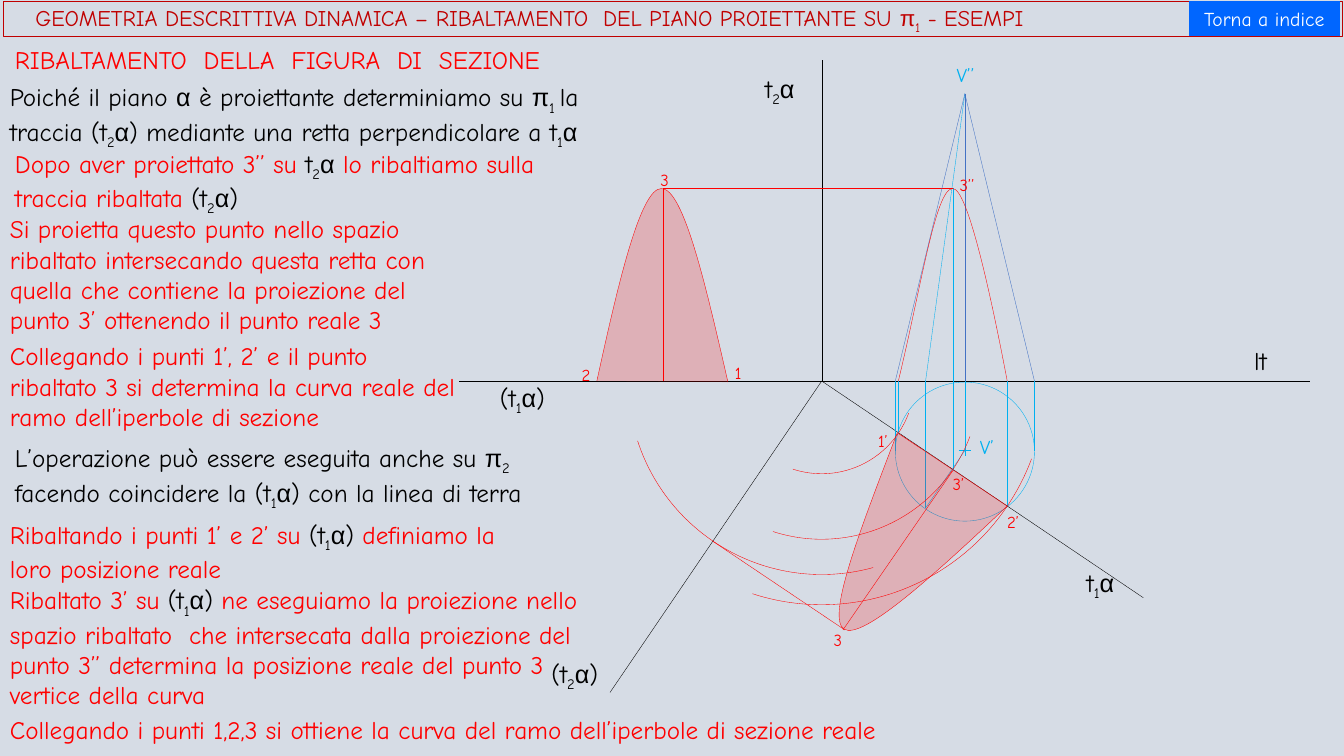
from itertools import groupby

from lxml.etree import SubElement
from pptx import Presentation
from pptx.dml.color import RGBColor
from pptx.enum.shapes import MSO_CONNECTOR, MSO_SHAPE
from pptx.enum.text import MSO_ANCHOR, MSO_AUTO_SIZE, PP_ALIGN
from pptx.oxml.ns import qn
from pptx.util import Inches, Pt

BLACK, RED, CYAN, BLUE = "000000", "FF0000", "00B0F0", "4472C4"
DARK, BUTTON, PAPER, WHITE = "C00000", "0066FF", "D6DCE5", "FFFFFF"
FONT, GREEK = "Comic Neue", "Arial"


def rgb(code):
    return RGBColor.from_string(code)


def split(text, color):
    """Yield (char, font, lowered, color): _ lowers one character, [ ] turn black."""
    low, ink = False, color
    for char in text:
        if char == "_":
            low = True
        elif char in "[]":
            ink = BLACK if char == "[" else color
        else:
            yield char, GREEK if char in "απ" else FONT, low, ink
            low = False


class Board:
    def __init__(self, slide):
        self.slide = slide
        self.shapes = slide.shapes
        self.width = Pt(0.25)
        slide.background.fill.solid()
        slide.background.fill.fore_color.rgb = rgb(PAPER)

    def paint(self, shape, fill=None, line=None, alpha=None):
        shape.shadow.inherit = False
        if fill:
            shape.fill.solid()
            shape.fill.fore_color.rgb = rgb(fill)
        else:
            shape.fill.background()
        if alpha:
            tone = shape._element.spPr.find(qn("a:solidFill"))[0]
            SubElement(tone, qn("a:alpha"), val=str(alpha * 1000))
        if line:
            shape.line.color.rgb = rgb(line)
            shape.line.width = self.width
        else:
            shape.line.fill.background()

    def line(self, color, start, end):
        spots = [Inches(v) for v in (*start, *end)]
        link = self.shapes.add_connector(MSO_CONNECTOR.STRAIGHT, *spots)
        link.line.color.rgb = rgb(color)
        link.line.width = self.width
        SubElement(link._element.spPr, qn("a:effectLst"))
        return link

    def shape(self, kind, box, fill=None, line=None):
        item = self.shapes.add_shape(kind, *[Inches(v) for v in box])
        self.paint(item, fill, line)
        return item

    def arc(self, center, radius, start, end):
        """Draw a red arc between two angles in degrees."""
        x, y = center
        box = (x - radius, y - radius, 2 * radius, 2 * radius)
        item = self.shape(MSO_SHAPE.ARC, box, line=RED)
        for i, angle in enumerate((start, end)):
            item.adjustments[i] = angle * 0.6  # 60000 units a degree, over 100000

    def curve(self, start, parts, alpha=None):
        """Draw cubic arcs; each part is two control points and an end."""
        knots = [[Inches(v) for v in part[2]] for part in parts]
        form = self.shapes.build_freeform(*[Inches(v) for v in start])
        form.add_line_segments(knots, close=False)
        item = form.convert_to_shape()
        steps = item._element.spPr.findall(".//" + qn("a:lnTo"))
        for step, part in zip(steps, parts):
            bend = step.makeelement(qn("a:cubicBezTo"))
            for x, y in part:
                SubElement(bend, qn("a:pt"), x=str(Inches(x) - item.left),
                           y=str(Inches(y) - item.top))
            step.getparent().replace(step, bend)
        self.paint(item, RED if alpha else None, RED, alpha)

    def runs(self, frame, text, size, color, align=PP_ALIGN.LEFT):
        """Add marked text to the frame and return its paragraph."""
        frame.word_wrap = True
        para = frame.paragraphs[0]
        para.alignment = align
        for style, chars in groupby(split(text, color), lambda mark: mark[1:]):
            face, low, ink = style
            run = para.add_run()
            run.text = "".join(mark[0] for mark in chars)
            run.font.size = Pt(size)
            run.font.name = face
            run.font.color.rgb = rgb(ink)
            if low:
                run.font._element.set("baseline", "-25000")
        return para

    def text(self, box, text, size=18, color=RED):
        frame = self.shapes.add_textbox(*[Inches(v) for v in box]).text_frame
        self.runs(frame, text, size, color)
        frame.auto_size = MSO_AUTO_SIZE.SHAPE_TO_FIT_TEXT


def draw(board):
    apex, foot, center = (9.57, 0.93), (9.57, 4.47), (8.15, 3.78)
    ground, top = 3.78, 1.87
    one, two, three = (8.91, 4.3), (9.99, 5.02), (9.45, 4.67)
    side, turned = (9.18, 5.04), (8.37, 6.24)

    board.shape(MSO_SHAPE.OVAL, (8.88, 3.79, 1.38, 1.38), line=CYAN)
    lines = [
        (BLACK, (7.1, ground), (12.99, ground)),
        (BLACK, center, (4.55, ground)),
        (BLACK, center, (11.34, 5.93)),
        (BLACK, center, (8.15, 0.6)),
        (BLACK, center, (6.05, 6.87)),
        (CYAN, (9.57, ground), foot),
        (BLUE, (9.57, ground), apex),
        (CYAN, foot, side),
        (CYAN, (side[0], ground), side),
        (CYAN, (side[0], ground), apex),
        (CYAN, (three[0], top), three),
        (CYAN, one, (one[0], ground)),
        (CYAN, two, (two[0], ground)),
        (RED, one, two),
        (RED, (three[0], top), (8.15, top)),
        (RED, (8.15, top), (6.58, top)),
        (RED, (6.58, ground), (6.58, top)),
        (RED, (7.07, 5.37), (8.38, 6.25)),
        (RED, three, (8.36, 6.25)),
    ]
    for x in (8.88, 10.26):
        lines += [(CYAN, (x, 4.47), (x, ground)), (BLUE, (x, ground), apex)]
    for color, start, end in lines:
        board.line(color, start, end)
    cross = [board.line(CYAN, (9.51, 4.47), (9.63, 4.47)),
             board.line(CYAN, (9.57, 4.41), (9.57, 4.52))]
    board.shapes.add_group_shape(cross)

    for radius, start, end in [(1.92, 74.61, 161.99), (2.22, 20.35, 108.02),
                               (0.92, 20.26, 108.03), (1.57, 20.48, 107.91)]:
        board.arc(center, radius, start, end)

    board.curve((8.91, ground), [
        ((9.14, 2.83), (9.28, top), (9.45, top)),
        ((9.59, top), (9.81, 2.83), (9.99, ground))])
    board.curve((8.9, 4.29), [
        ((8.55, 5.21), (8.19, 6.12), turned),
        ((8.55, 6.36), (9.28, 5.69), two)], alpha=20)
    board.curve((5.92, ground), [
        ((6.13, 2.82), (6.35, top), (6.56, top)),
        ((6.78, top), (7, 2.83), (7.22, 3.79))], alpha=20)


def label(board):
    for x, y, wide, text in [
            (12.34, 3.38, 0.56, "lt"), (10.68, 5.58, 0.56, "t_1α"),
            (7.49, 0.68, 0.86, "t_2α"), (5.37, 6.48, 0.86, "(t_2α)"),
            (4.86, 3.74, 0.75, "(t_1α)")]:
        board.text((x, y, wide, 0.4), text, color=BLACK)
    for x, y, wide, text in [(9.62, 4.27, 0.45, "V’"), (9.39, 0.58, 0.47, "V’’")]:
        board.text((x, y, wide, 0.34), text, 14, CYAN)
    for x, y, text in [
            (9.42, 1.68, "3’’"), (9.35, 4.65, "3’"), (8.17, 6.2, "3"),
            (8.61, 4.22, "1’"), (9.89, 5.03, "2’"), (7.19, 3.55, "1"),
            (5.67, 3.57, "2"), (6.45, 1.63, "3")]:
        board.text((x, y, 0.39, 0.3), text, 12)


def explain(board):
    for box, text in [
            ((0.05, 0.39, 6.62, 0.4), "RIBALTAMENTO  DELLA  FIGURA  DI  SEZIONE"),
            ((0, 0.76, 6.46, 0.71),
             "[Poiché il piano α è proiettante determiniamo su π_1_ la traccia (t_2α) "
             "mediante una retta perpendicolare a t_1α]"),
            ((0.05, 1.42, 5.63, 0.71),
             "Dopo aver proiettato 3’’ su [t_2α] lo ribaltiamo sulla traccia "
             "ribaltata [(t_2α)]"),
            ((0, 2.07, 4.69, 1.31),
             "Si proietta questo punto nello spazio ribaltato intersecando questa "
             "retta con quella che contiene la proiezione del punto 3’ ottenendo "
             "il punto reale 3"),
            ((0, 3.33, 4.67, 1.01),
             "Collegando i punti 1’, 2’ e il punto ribaltato 3 si determina la "
             "curva reale del ramo dell’iperbole di sezione"),
            ((0.05, 4.34, 5.94, 0.71),
             "[L’operazione può essere eseguita anche su π_2_ facendo coincidere la "
             "(t_1α) con la linea di terra]"),
            ((0, 5.1, 5.41, 0.71),
             "Ribaltando i punti 1’ e 2’ su [(t_1α) ]definiamo la loro posizione reale"),
            ((0, 5.75, 6.04, 1.31),
             "Ribaltato 3’ su [(t_1α) ]ne eseguiamo la proiezione nello spazio "
             "ribaltato  che intersecata dalla proiezione del punto 3’’ determina la "
             "posizione reale del punto 3 vertice della curva"),
            ((0, 7.04, 9.74, 0.4),
             "Collegando i punti 1,2,3 si ottiene la curva del ramo dell’iperbole di "
             "sezione reale")]:
        board.text(box, text)


def head(board):
    bar = board.shape(MSO_SHAPE.RECTANGLE, (0.03, 0.01, 13.28, 0.35), line=DARK)
    frame = bar.text_frame
    frame.vertical_anchor = MSO_ANCHOR.MIDDLE
    frame.margin_left = Inches(0.32)
    title = ("GEOMETRIA DESCRITTIVA DINAMICA – RIBALTAMENTO  DEL PIANO PROIETTANTE "
             "SU π_1 - ESEMPI")
    board.runs(frame, title, 16, DARK).line_spacing = 0.9
    button = board.shape(MSO_SHAPE.ACTION_BUTTON_CUSTOM, (11.79, 0.01, 1.5, 0.35), BUTTON)
    button.text_frame.vertical_anchor = MSO_ANCHOR.MIDDLE
    board.runs(button.text_frame, "Torna a indice", 14, WHITE, PP_ALIGN.CENTER)


def main():
    deck = Presentation()
    deck.slide_width, deck.slide_height = Inches(13.33), Inches(7.5)
    board = Board(deck.slides.add_slide(deck.slide_layouts[6]))
    draw(board)
    label(board)
    explain(board)
    head(board)
    deck.save("out.pptx")


if __name__ == "__main__":
    main()
